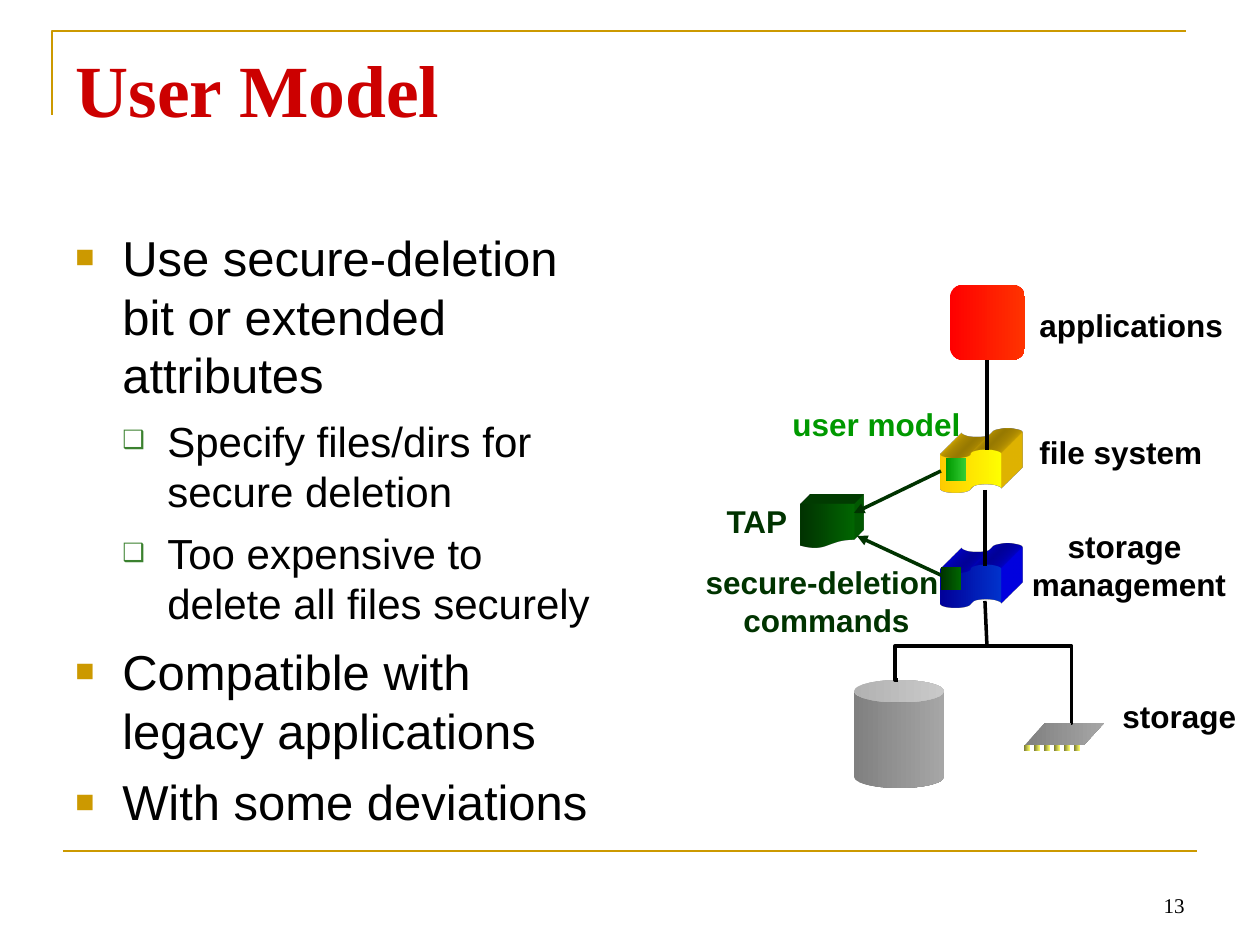
from lxml.etree import SubElement
from pptx import Presentation
from pptx.dml.color import RGBColor
from pptx.enum.shapes import MSO_CONNECTOR as LINK, MSO_SHAPE as SHAPE
from pptx.enum.text import MSO_ANCHOR as ANCHOR, PP_ALIGN as ALIGN
from pptx.oxml.ns import qn
from pptx.util import Pt

PX = 914400 // 126


class Theme:
    """Colours, fonts and type sizes of the slide."""
    sans, serif = "Arial", "Times New Roman"
    title, body, detail, label, number = 42, 28, 24, 18, 12
    gold, red, black, leaf = "CC9900", "CC0000", "000000", "3B812F"
    dark_green, green = "003300", "009900"
    app = ("FF0000", "FF3300")
    metal = ("808080", "A6A6A6")
    pin = ("76762F", "FFFF66")
    blue, blue_side = ("000099", "0033CC"), "0000FF"
    yellow, yellow_side = ("FFCC00", "FFFF00"), "FFCC00"
    tap, tap_side = ("003300", "006600"), "006600"
    marker = ("009900", "33CC33")


def px(*lengths):
    """Turn pixel lengths into EMU."""
    return [round(length * PX) for length in lengths]


def rgb(code):
    """Read a hex colour."""
    return RGBColor.from_string(code)


def add_block(slide, kind, box, colours, adjust=None):
    """Add a preset shape with a left-to-right gradient and no outline."""
    block = slide.shapes.add_shape(kind, *px(*box))
    if adjust is not None:
        block.adjustments[0] = adjust
    block.shadow.inherit = False
    block.fill.gradient()
    block.fill.gradient_angle = 0
    for stop, colour, position in zip(block.fill.gradient_stops, colours, (0, 1)):
        stop.color.rgb = rgb(colour)
        stop.position = position
    block.line.fill.background()
    return block


def extrude(block, depth, colour):
    """Give a block depth towards the top right."""
    properties = block._element.spPr
    scene = SubElement(properties, qn("a:scene3d"))
    SubElement(scene, qn("a:camera"), prst="legacyObliqueTopRight")
    SubElement(scene, qn("a:lightRig"), rig="legacyFlat3", dir="b")
    solid = SubElement(properties, qn("a:sp3d"), extrusionH=str(px(depth)[0]),
                       prstMaterial="legacyMatte")
    SubElement(SubElement(solid, qn("a:extrusionClr")), qn("a:srgbClr"), val=colour)


def add_link(slide, start, end, colour=Theme.black, width=2, bend=None, arrow=False):
    """Add a straight or bent connector, with an optional arrowhead."""
    kind = LINK.ELBOW if bend else LINK.STRAIGHT
    link = slide.shapes.add_connector(kind, *px(*start, *end))
    link.line.color.rgb = rgb(colour)
    link.line.width = Pt(width)
    properties = link._element.spPr
    if bend:
        guides = properties.find(qn("a:prstGeom")).find(qn("a:avLst"))
        SubElement(guides, qn("a:gd"), name="adj1", fmla=f"val {bend}")
    if arrow:
        SubElement(properties.find(qn("a:ln")), qn("a:tailEnd"), type="triangle")
    SubElement(properties, qn("a:effectLst"))


def add_bullet(paragraph, mark, colour, percent, margin, hang):
    """Give a paragraph a coloured bullet and a hanging indent."""
    properties = paragraph._p.get_or_add_pPr()
    properties.set("marL", str(px(margin)[0]))
    properties.set("indent", str(-px(hang)[0]))
    SubElement(SubElement(properties, qn("a:buClr")), qn("a:srgbClr"), val=colour)
    SubElement(properties, qn("a:buSzPct"), val=str(percent * 1000))
    SubElement(properties, qn("a:buFont"), typeface=Theme.sans)
    SubElement(properties, qn("a:buChar"), char=mark)


def write(paragraph, text, size=Theme.label, font=Theme.sans, colour=Theme.black,
          bold=False, align=ALIGN.LEFT):
    """Put formatted text in a paragraph."""
    paragraph.alignment = align
    run = paragraph.add_run()
    run.text = text
    run.font.name, run.font.size, run.font.bold = font, Pt(size), bold
    run.font.color.rgb = rgb(colour)


def add_text(slide, box, lines, anchor=ANCHOR.TOP, **style):
    """Add a wrapping text box with one paragraph per line."""
    frame = slide.shapes.add_textbox(*px(*box)).text_frame
    frame.word_wrap = True
    frame.vertical_anchor = anchor
    for i, line in enumerate(lines):
        write(frame.add_paragraph() if i else frame.paragraphs[0], line, **style)


def add_points(slide):
    """Add the two-level bullet list."""
    points = [
        (0, "Use secure-deletion bit or extended attributes"),
        (1, "Specify files/dirs for secure deletion"),
        (1, "Too expensive to delete all files securely"),
        (0, "Compatible with legacy applications"),
        (0, "With some deviations"),
    ]
    levels = [
        (Theme.body, 7.5, ("■", Theme.gold, 65, 47, 47)),
        (Theme.detail, 6.5, ("❑", Theme.leaf, 60, 92, 45)),
    ]
    frame = slide.shapes.add_textbox(*px(63, 221, 556, 624)).text_frame
    frame.word_wrap = True
    for i, (level, text) in enumerate(points):
        size, gap, bullet = levels[level]
        point = frame.add_paragraph() if i else frame.paragraphs[0]
        point.level = level
        if i:
            point.space_before = Pt(gap)
        add_bullet(point, *bullet)
        write(point, text, size=size)


def add_frame(slide):
    """Add the gold rules, title and page number."""
    builder = slide.shapes.build_freeform(52, 115, scale=PX)
    builder.add_line_segments([(52, 31), (1186, 31)], close=False)
    corner = builder.convert_to_shape()
    corner.shadow.inherit = False
    corner.fill.background()
    corner.line.color.rgb = rgb(Theme.gold)
    corner.line.width = Pt(1.5)
    add_link(slide, (63, 851), (1197, 851), Theme.gold, 1.5)
    add_text(slide, (63, 38, 1134, 189), ["User Model"], size=Theme.title,
             font=Theme.serif, colour=Theme.red, bold=True)
    add_text(slide, (903, 861, 294, 63), ["13"], anchor=ANCHOR.BOTTOM,
             size=Theme.number, font=Theme.serif, align=ALIGN.RIGHT)


def add_layers(slide):
    """Add the blocks of the storage stack."""
    add_block(slide, SHAPE.ROUNDED_RECTANGLE, (950, 285, 75, 75), Theme.app)
    add_block(slide, SHAPE.CAN, (854, 680, 90, 108), Theme.metal)
    add_block(slide, SHAPE.PARALLELOGRAM, (1025, 723, 79, 22), Theme.metal, 0.91)
    for pin in range(6):
        add_block(slide, SHAPE.RECTANGLE, (1024 + 10 * pin, 745, 6, 6), Theme.pin)
    solids = [
        (SHAPE.FLOWCHART_PUNCHED_TAPE, (941, 565, 60, 43), Theme.blue, 60, Theme.blue_side),
        (SHAPE.FLOWCHART_PUNCHED_TAPE, (941, 450, 60, 43), Theme.yellow, 60, Theme.yellow_side),
        (SHAPE.FLOWCHART_DOCUMENT, (800, 504, 54, 44), Theme.tap, 27, Theme.tap_side),
    ]
    for kind, box, face, depth, side in solids:
        extrude(add_block(slide, kind, box, face), depth, side)


def add_links(slide):
    """Add the lines between layers and the arrows to TAP."""
    joint = (987, 646)
    add_link(slide, (987, 360), (987, 450))
    add_link(slide, (985, 490), (985, 566))
    add_link(slide, (985, 601), joint)
    add_link(slide, joint, (1071, 723), bend=100900)
    add_link(slide, joint, (898, 680), bend=103500)
    add_link(slide, (941, 471), (854, 513), Theme.dark_green, arrow=True)
    add_link(slide, (945, 577), (857, 536), Theme.dark_green, arrow=True)
    add_block(slide, SHAPE.RECTANGLE, (941, 567, 20, 23), Theme.tap)
    add_block(slide, SHAPE.RECTANGLE, (946, 458, 20, 23), Theme.marker)


def add_labels(slide):
    """Name the parts of the diagram."""
    labels = [
        ((1027, 300, 265, 64), ["applications"], Theme.black, ALIGN.LEFT),
        ((1027, 427, 238, 64), ["file system"], Theme.black, ALIGN.LEFT),
        ((1018, 521, 222, 89), ["storage ", "management"], Theme.black, ALIGN.CENTER),
        ((1110, 691, 188, 64), ["storage"], Theme.black, ALIGN.LEFT),
        ((780, 399, 198, 50), ["user model"], Theme.green, ALIGN.LEFT),
        ((690, 557, 273, 89), ["secure-deletion ", "commands"], Theme.dark_green, ALIGN.CENTER),
        ((713, 496, 88, 50), ["TAP"], Theme.dark_green, ALIGN.CENTER),
    ]
    for box, lines, colour, align in labels:
        add_text(slide, box, lines, colour=colour, align=align, bold=True)


def main():
    """Build and save the slide."""
    deck = Presentation()
    deck.slide_width, deck.slide_height = px(1260, 945)
    slide = deck.slides.add_slide(deck.slide_layouts[6])
    add_frame(slide)
    add_points(slide)
    add_layers(slide)
    add_links(slide)
    add_labels(slide)
    deck.save("out.pptx")


if __name__ == "__main__":
    main()
